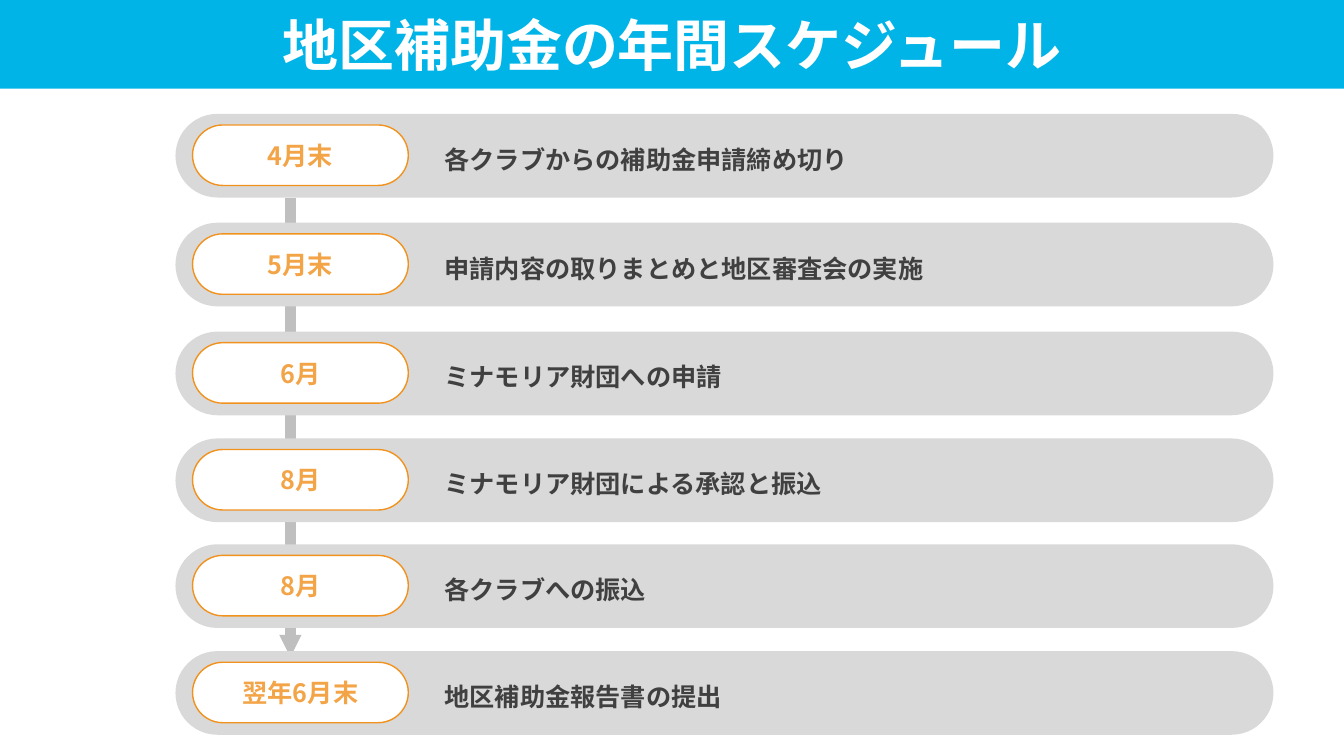
import pptx
import pptx.util
import pptx.dml.color
import pptx.enum.shapes
import pptx.enum.text
import pptx.oxml
import pptx.oxml.ns
import lxml.etree

Inches = pptx.util.Inches
Pt = pptx.util.Pt
SHAPES = pptx.enum.shapes.MSO_SHAPE
ANCHOR = pptx.enum.text.MSO_ANCHOR
ALIGN = pptx.enum.text.PP_ALIGN
AUTO_SIZE = pptx.enum.text.MSO_AUTO_SIZE

FONT = "Noto Sans CJK JP"
COLORS = {
    "banner": "01B4E7",
    "white": "FFFFFF",
    "bar": "D9D9D9",
    "arrow": "BFBFBF",
    "outline": "F1921F",
    "month": "F3A447",
    "text": "404040",
}
STEPS = [
    (1.13, "4月末", "各クラブからの補助金申請締め切り"),
    (2.21, "5月末", "申請内容の取りまとめと地区審査会の実施"),
    (3.29, "6月", "ミナモリア財団への申請"),
    (4.35, "8月", "ミナモリア財団による承認と振込"),
    (5.40, "8月", "各クラブへの振込"),
    (6.46, "翌年6月末", "地区補助金報告書の提出"),
]


def color(name):
    return pptx.dml.color.RGBColor.from_string(COLORS[name])


def set_attributes(target, values):
    for name, value in values.items():
        setattr(target, name, value)


def place(shape, left, top, width, height):
    set_attributes(shape, {
        "left": Inches(left), "top": Inches(top),
        "width": Inches(width), "height": Inches(height),
    })


def fill_shape(shape, color_name):
    shape.fill.solid()
    shape.fill.fore_color.rgb = color(color_name)


def write_text(shape, text, size, color_name, frame_format, paragraph_format):
    set_attributes(shape.text_frame, {"word_wrap": True, **frame_format})
    paragraph = shape.text_frame.paragraphs[0]
    set_attributes(paragraph, paragraph_format)
    run = paragraph.add_run()
    run.text = text
    run.font.color.rgb = color(color_name)
    set_attributes(run.font, {"size": Pt(size), "bold": True, "name": FONT})
    east_asian = lxml.etree.SubElement(
        run.font._element, pptx.oxml.ns.qn("a:ea"))
    east_asian.set("typeface", FONT)


def add_title(slide, text):
    title = slide.shapes.title
    place(title, 0, 0, 13.33, 0.88)
    fill_shape(title, "banner")
    write_text(title, text, 40, "white",
               {"vertical_anchor": ANCHOR.MIDDLE, "auto_size": AUTO_SIZE.NONE},
               {"alignment": ALIGN.CENTER})


def add_arrow(slide, x, top, bottom):
    arrow = slide.shapes.add_connector(
        pptx.enum.shapes.MSO_CONNECTOR.STRAIGHT,
        Inches(x), Inches(top), Inches(x), Inches(bottom))
    arrow.line.width = Pt(8)
    arrow.line.color.rgb = color("arrow")
    head = lxml.etree.SubElement(
        arrow.line._get_or_add_ln(), pptx.oxml.ns.qn("a:tailEnd"))
    for name, value in {"type": "triangle", "w": "sm", "len": "sm"}.items():
        head.set(name, value)
    lxml.etree.SubElement(
        arrow._element.spPr, pptx.oxml.ns.qn("a:effectLst"))


def add_pill(slide, left, top, width, height, fill, outline=None):
    pill = slide.shapes.add_shape(
        SHAPES.ROUNDED_RECTANGLE,
        Inches(left), Inches(top), Inches(width), Inches(height))
    pill.adjustments[0] = 0.5
    pill.shadow.inherit = False
    fill_shape(pill, fill)
    if outline:
        pill.line.color.rgb = color(outline)
        pill.line.width = Pt(1)
    else:
        pill.line.fill.background()
    return pill


def add_step(slide, top, month, description):
    add_pill(slide, 1.74, top, 10.89, 0.83, "bar")
    month_pill = add_pill(
        slide, 1.91, top + 0.11, 2.14, 0.6, "white", "outline")
    write_text(month_pill, month, 18, "month",
               {"vertical_anchor": ANCHOR.MIDDLE}, {"alignment": ALIGN.CENTER})
    box = slide.shapes.add_textbox(
        Inches(4.31), Inches(top + 0.19), Inches(7.86), Inches(0.44))
    write_text(box, description, 18, "text",
               {"auto_size": AUTO_SIZE.SHAPE_TO_FIT_TEXT},
               {"line_spacing": 1.2})


def main():
    presentation = pptx.Presentation()
    set_attributes(presentation, {
        "slide_width": Inches(13.33), "slide_height": Inches(7.5)})
    slide = presentation.slides.add_slide(presentation.slide_layouts[5])
    add_title(slide, "地区補助金の年間スケジュール")
    add_arrow(slide, 2.88, 1.96, 6.52)
    for step in STEPS:
        add_step(slide, *step)
    presentation.save("out.pptx")


if __name__ == "__main__":
    main()
